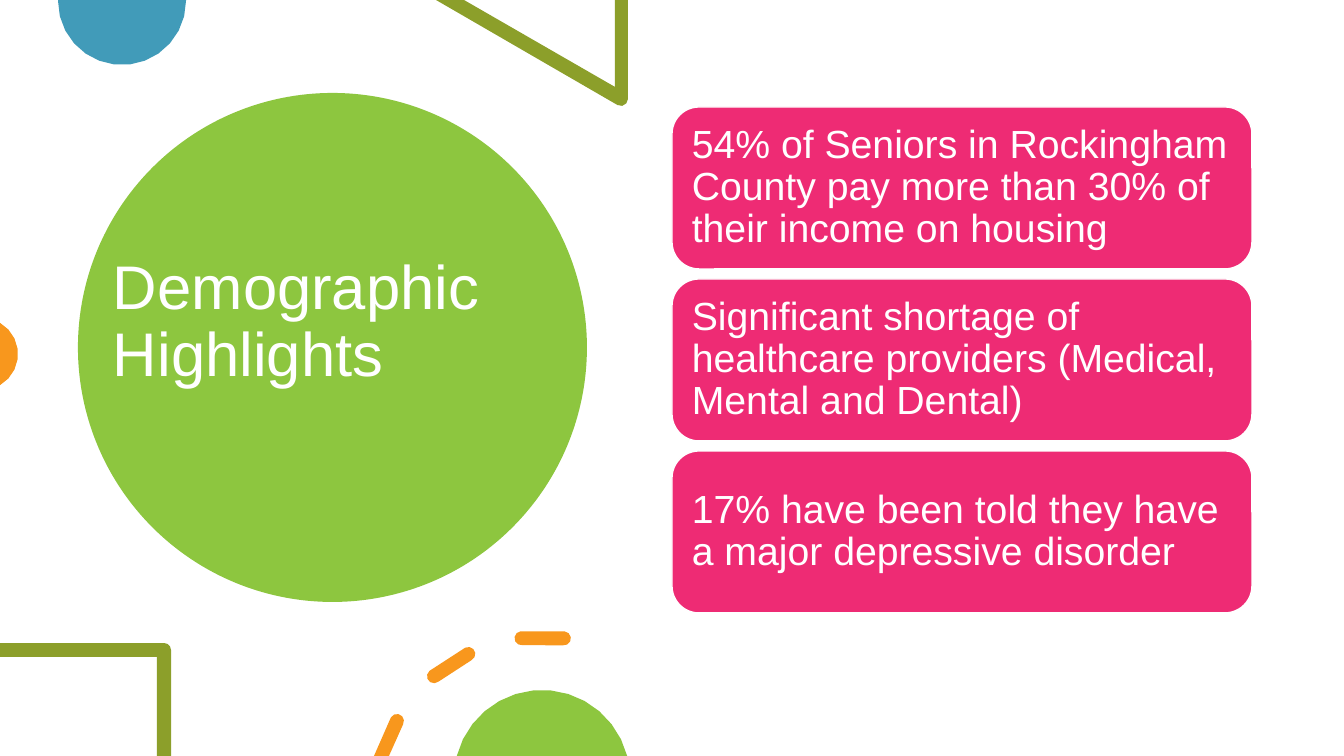
from math import acos, ceil, cos, sin, radians
from pptx import Presentation
from pptx.dml.color import RGBColor
from pptx.enum.shapes import MSO_SHAPE
from pptx.enum.text import MSO_ANCHOR, MSO_AUTO_SIZE, PP_ALIGN
from pptx.util import Pt

# Content
TITLE = ["Demographic", "Highlights"]
FACTS = [
    "54% of Seniors in Rockingham County pay more than 30% of their income on housing",
    "Significant shortage of healthcare providers (Medical, Mental and Dental)",
    "17% have been told they have a major depressive disorder",
]
GREEN, PINK, BLUE = "8DC63F", "EE2B74", "419BB9"
OLIVE, ORANGE, WHITE = "8C9F2A", "F8971D", "FFFFFF"
WIDE, HIGH = 1344, 756
CARD = (672, 107, 580, 162)
STEP = 172  # from one card to the next


def px(n):
    return round(n * 914400 / 100.8)


def color(code):
    return RGBColor.from_string(code)


def paint(shape, fill, line=None):
    shape.shadow.inherit = False
    shape.fill.solid()
    shape.fill.fore_color.rgb = color(fill)
    if line:
        shape.line.color.rgb = color(line)
        shape.line.width = Pt(1)
    else:
        shape.line.fill.background()


def arc(x, y, r, start, end):
    """Points on a circle, in degrees clockwise from the right."""
    sweep = radians(end - start)
    count = ceil(abs(sweep) / (2 * acos(1 - 0.5 / r)))  # within half a px
    turns = [radians(start) + sweep * i / count for i in range(count + 1)]
    return [(x + r * cos(t), y + r * sin(t)) for t in turns]


def dash(x, y, r, half, start, end):
    """A piece of a ring with round ends."""
    def cap(turn, first):
        t = radians(turn)
        return arc(x + r * cos(t), y + r * sin(t), half, first, first + 180)
    return cap(end, end) + cap(start, start + 180)


def draw(fill, *loops):
    loops = [[(px(x), px(y)) for x, y in loop] for loop in loops]
    pen = shapes.build_freeform(*loops[0][0])
    for i, loop in enumerate(loops):
        if i:
            pen.move_to(*loop[0])
        pen.add_line_segments(loop[1:], close=True)
    paint(pen.convert_to_shape(), fill)


def write(para, text, size):
    para.alignment = PP_ALIGN.LEFT
    para.line_spacing = 0.9
    run = para.add_run()
    run.text = text
    run.font.size = Pt(size)
    run.font.name = "Arial"
    run.font.color.rgb = color(WHITE)


deck = Presentation()
deck.slide_width, deck.slide_height = px(WIDE), px(HIGH)
slide = deck.slides.add_slide(deck.slide_layouts[5])
shapes = slide.shapes
title = shapes.title

# Large circle, kept behind the title
disc = shapes.add_shape(MSO_SHAPE.OVAL, px(78), px(93), px(509), px(509))
paint(disc, GREEN)
title._element.addprevious(disc._element)

# Title, raised by one line through the bottom margin
title.left, title.top, title.width, title.height = map(px, (103, 136, 408, 449))
frame = title.text_frame
frame.word_wrap = True
frame.auto_size = MSO_AUTO_SIZE.NONE
frame.vertical_anchor = MSO_ANCHOR.MIDDLE
frame.margin_left = frame.margin_right = px(10)
frame.margin_top, frame.margin_bottom = px(5), px(80)
head = frame.paragraphs[0]
for i, words in enumerate(TITLE):
    if i:
        head.add_line_break()
    write(head, words, 44)

# Shapes cut by the top and left edges
draw(BLUE, arc(122, 1, 64, 0, 180) + [(58, 0), (186, 0)])
draw(OLIVE, [(628, 0), (615, 0), (615, 87), (464, 0), (436, 0)]
     + arc(621, 99, 7, 120, 0))
draw(ORANGE, arc(-18, 354, 36, -60, 60))

# Fact cards
left, top, width, height = CARD
for i, fact in enumerate(FACTS):
    card = shapes.add_shape(MSO_SHAPE.ROUNDED_RECTANGLE, px(left),
                            px(top + i * STEP), px(width), px(height))
    paint(card, PINK, WHITE)
    frame = card.text_frame
    frame.word_wrap = True
    frame.vertical_anchor = MSO_ANCHOR.MIDDLE
    frame.margin_left = frame.margin_right = px(12)
    frame.margin_top = frame.margin_bottom = px(12)
    write(frame.paragraphs[0], fact, 28)

# Shapes cut by the bottom edge
draw(OLIVE, [(0, 657), (0, 643)] + arc(164, 650, 7, 270, 360)
     + [(171, HIGH), (157, HIGH), (157, 657)])
ring = (542, 805, 168, 7)
low = [(374, HIGH)] + arc(397, 721, 7, 210, 390) + [(389, HIGH)]
draw(ORANGE, low, dash(*ring, 230, 244), dash(*ring, 263, 277.5))
draw(GREEN, arc(542, 778, 88, 194.5, 345.5))

deck.save("out.pptx")
